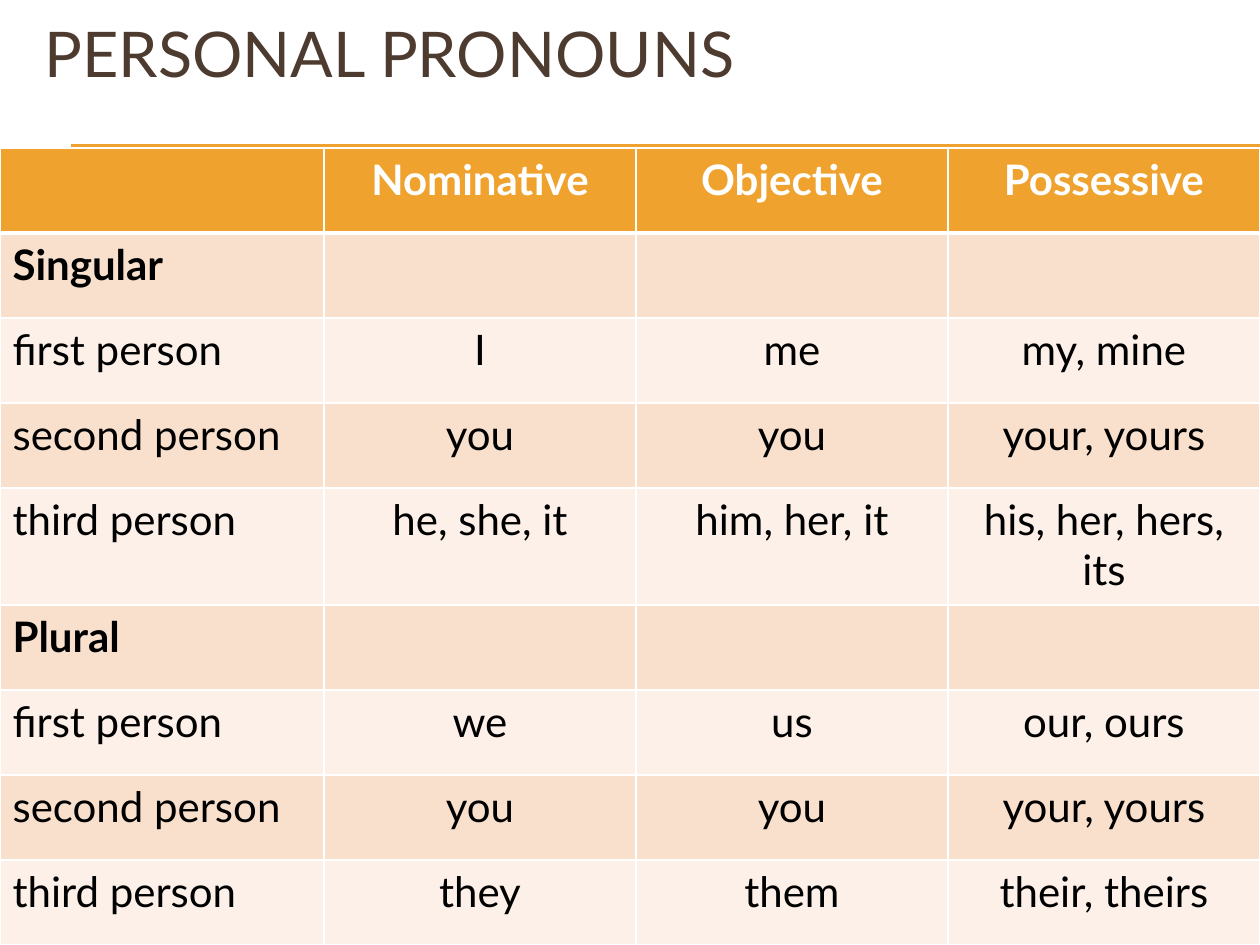
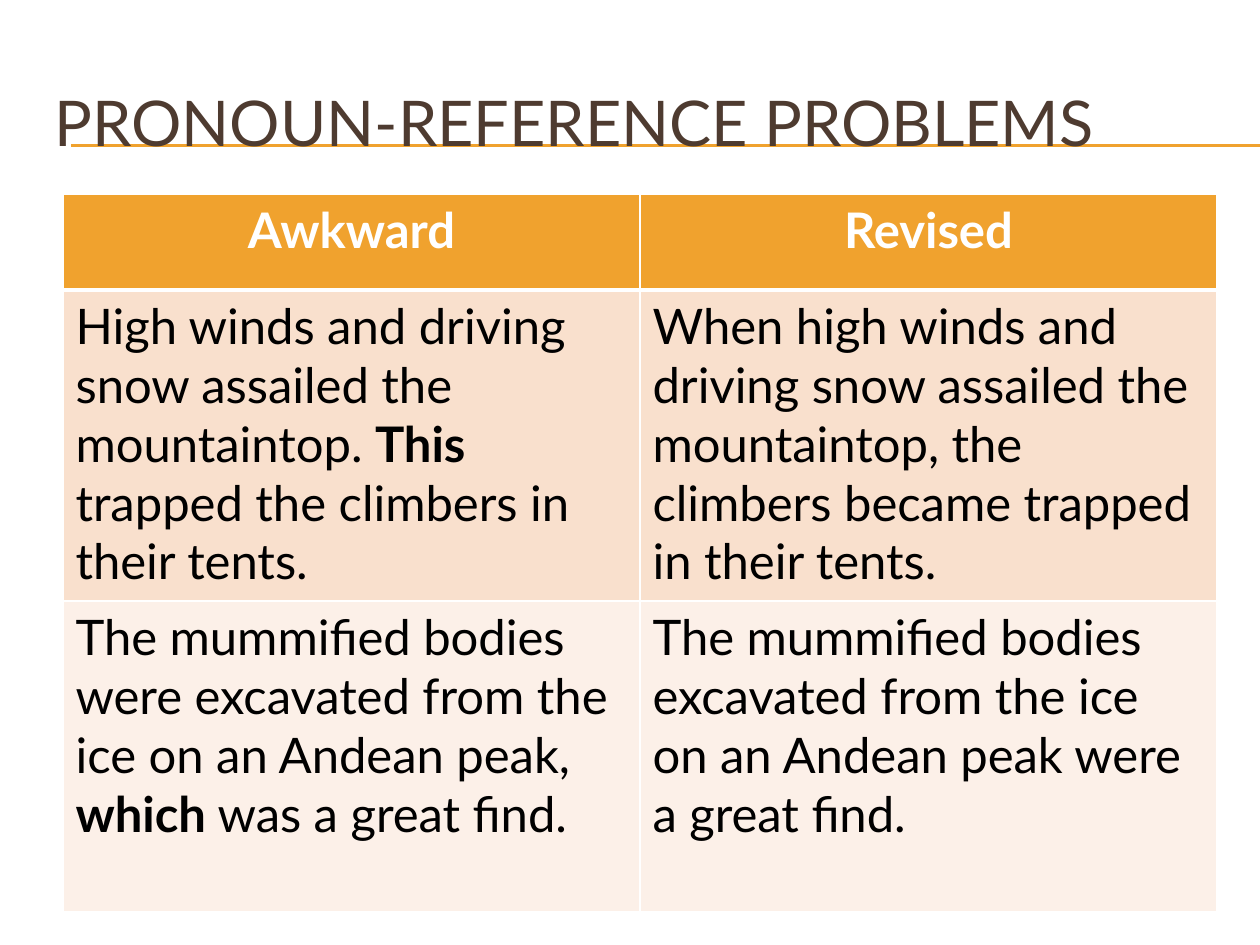
from lxml.etree import SubElement
from pptx import Presentation
from pptx.dml.color import RGBColor
from pptx.enum.shapes import MSO_CONNECTOR
from pptx.enum.text import MSO_ANCHOR, MSO_AUTO_SIZE, PP_ALIGN
from pptx.oxml.ns import qn
from pptx.util import Emu, Pt

PX_PER_INCH = 126
SLIDE_WIDTH, SLIDE_HEIGHT = 1260, 945
TITLE_ONLY = 5

FONT = "Lato"
BROWN = RGBColor(0x4E, 0x3B, 0x30)
ORANGE = RGBColor(0xF0, 0xA2, 0x2E)
PEACH = RGBColor(0xF9, 0xE0, 0xCD)
CREAM = RGBColor(0xFC, 0xF0, 0xE8)
BLACK = RGBColor(0, 0, 0)
WHITE = RGBColor(0xFF, 0xFF, 0xFF)

# Asterisks enclose bold words.
PERSONAL_PRONOUNS = [
    ("", "Nominative", "Objective", "Possessive"),
    ("*Singular*", "", "", ""),
    ("first person", "I", "me", "my, mine"),
    ("second person", "you", "you", "your, yours"),
    ("third person", "he, she, it", "him, her, it", "his, her, hers, its"),
    ("*Plural*", "", "", ""),
    ("first person", "we", "us", "our, ours"),
    ("second person", "you", "you", "your, yours"),
    ("third person", "they", "them", "their, theirs"),
]
REFERENCE_PROBLEMS = [
    ("Awkward", "Revised"),
    ("High winds and driving snow assailed the mountaintop. *This* trapped "
     "the climbers in their tents.",
     "When high winds and driving snow assailed the mountaintop, the climbers "
     "became trapped in their tents."),
    ("The mummified bodies were excavated from the ice on an Andean peak, "
     "*which* was a great find.",
     "The mummified bodies excavated from the ice on an Andean peak were a "
     "great find."),
]


def px(length):
    return Emu(round(length * 914400 / PX_PER_INCH))


def write_text(frame, text, size, color, bold=False, align=PP_ALIGN.LEFT):
    """Fill the frame with one paragraph, bold between asterisks."""
    paragraph = frame.paragraphs[0]
    paragraph.alignment = align
    for index, part in enumerate(text.split("*")):
        if part:
            run = paragraph.add_run()
            run.text = part
            run.font.name = FONT
            run.font.size = Pt(size)
            run.font.bold = bold or index % 2 == 1
            run.font.color.rgb = color


def add_title_rule(slide, y):
    """Draw a thin line behind the title, out to the right edge."""
    rule = slide.shapes.add_connector(
        MSO_CONNECTOR.STRAIGHT, px(71), px(y), px(SLIDE_WIDTH), px(y))
    rule.line.color.rgb = ORANGE
    rule.line.width = Pt(0.75)
    SubElement(rule.element.spPr, qn("a:effectLst"))
    slide.shapes.title.element.addprevious(rule.element)


def add_titled_slide(deck, text, left, top, width, height):
    slide = deck.slides.add_slide(deck.slide_layouts[TITLE_ONLY])
    title = slide.shapes.title
    title.left, title.top = px(left), px(top)
    title.width, title.height = px(width), px(height)
    frame = title.text_frame
    frame.auto_size = MSO_AUTO_SIZE.NONE
    frame.vertical_anchor = MSO_ANCHOR.MIDDLE
    write_text(frame, text, 36, BROWN)
    for y in (145, 146):
        add_title_rule(slide, y)
    return slide


def set_borders(cell, top=1, bottom=1):
    """Give the cell white borders; widths are in points."""
    properties = cell._tc.get_or_add_tcPr()
    for side, width in (("L", 1), ("R", 1), ("T", top), ("B", bottom)):
        border = SubElement(properties, qn(f"a:ln{side}"), w=str(Pt(width)))
        fill = SubElement(border, qn("a:solidFill"))
        SubElement(fill, qn("a:srgbClr"), val=str(WHITE))


def add_banded_table(slide, rows, left, top, column_widths, row_heights,
                     size, first_centered):
    """Add a table whose columns are centred from first_centered on."""
    table = slide.shapes.add_table(
        len(rows), len(column_widths), px(left), px(top),
        px(sum(column_widths)), px(sum(row_heights))).table
    table.horz_banding = False
    for column, width in zip(table.columns, column_widths):
        column.width = px(width)
    for r, (row, height) in enumerate(zip(rows, row_heights)):
        table.rows[r].height = px(height)
        header = r == 0
        band = ORANGE if header else PEACH if r % 2 else CREAM
        for c, text in enumerate(row):
            cell = table.cell(r, c)
            set_borders(cell, top=3 if r == 1 else 1, bottom=3 if header else 1)
            cell.fill.solid()
            cell.fill.fore_color.rgb = band
            centered = header or c >= first_centered
            write_text(cell.text_frame, text, size,
                       WHITE if header else BLACK, bold=header,
                       align=PP_ALIGN.CENTER if centered else PP_ALIGN.LEFT)


def main():
    deck = Presentation()
    deck.slide_width, deck.slide_height = px(SLIDE_WIDTH), px(SLIDE_HEIGHT)

    pronouns = add_titled_slide(deck, "PERSONAL PRONOUNS", 32, 0, 1187, 105)
    add_banded_table(pronouns, PERSONAL_PRONOUNS, 0, 148,
                     [324] + [312] * 3, [85] * 4 + [117] + [85] * 4,
                     size=24, first_centered=1)

    problems = add_titled_slide(
        deck, "PRONOUN-REFERENCE PROBLEMS", 42, 63, 1197, 116)
    add_banded_table(problems, REFERENCE_PROBLEMS, 63, 194,
                     [577] * 2, [96, 311, 311], size=28, first_centered=2)

    deck.save("out.pptx")


if __name__ == "__main__":
    main()
